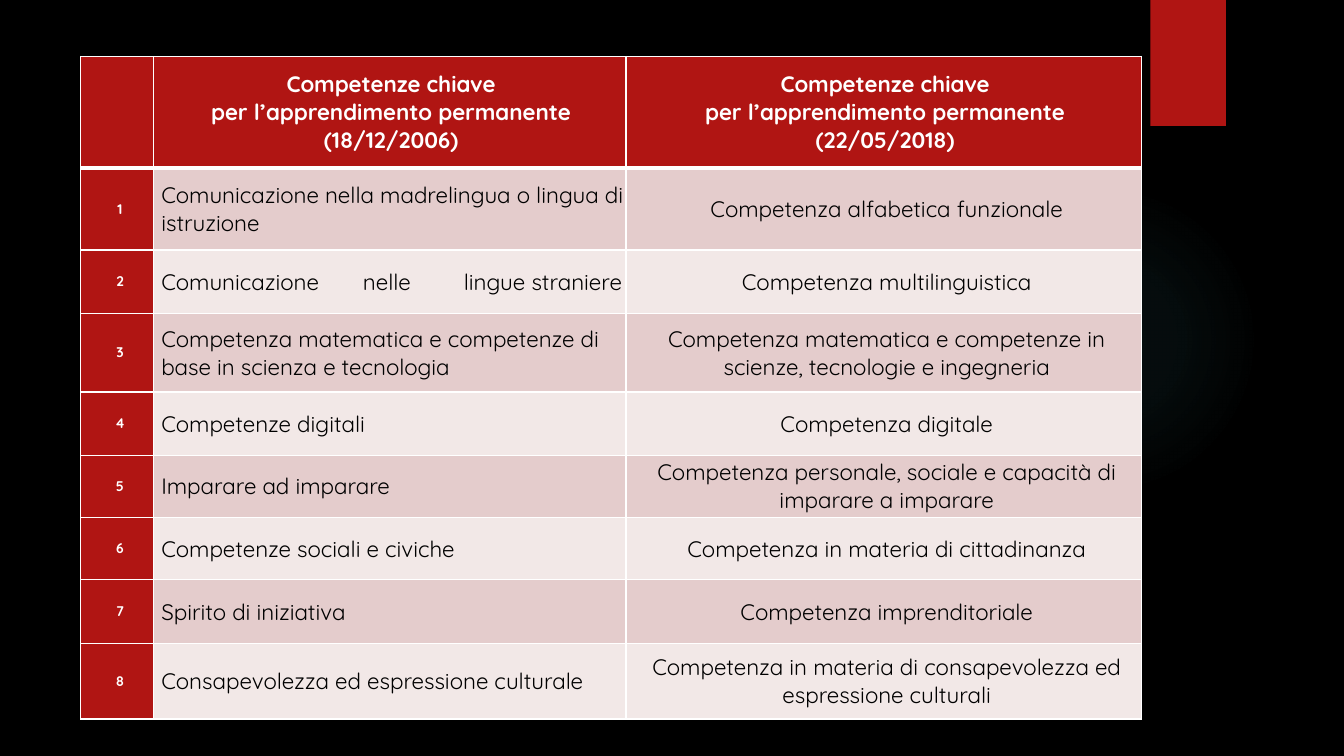
from dataclasses import dataclass

from lxml import etree
from pptx import Presentation
from pptx.dml.color import RGBColor
from pptx.enum.shapes import MSO_SHAPE
from pptx.enum.text import MSO_ANCHOR, PP_ALIGN
from pptx.oxml import parse_xml
from pptx.oxml.ns import nsdecls
from pptx.util import Inches, Pt

CENTER, LEFT = PP_ALIGN.CENTER, PP_ALIGN.LEFT
MIDDLE = MSO_ANCHOR.MIDDLE
OVAL, RECTANGLE = MSO_SHAPE.OVAL, MSO_SHAPE.RECTANGLE
FONT = "Quicksand"
COLORS = {"background": "000000", "red": "B01513", "glow": "50B9C1", "white": "FFFFFF",
          "black": "000000", "odd": "E4CCCC", "even": "F2E8E7"}
COLUMN_WIDTHS = [0.72, 4.69, 5.11]
ROW_HEIGHTS = [1.11, 0.81, 0.63, 0.78, 0.63, 0.61, 0.62, 0.63, 0.75]
GLOW_STOPS = [(0, 7), (36, 6), (69, 0)]


@dataclass(frozen=True)
class CellStyle:
    """Look of one kind of table cell."""
    fill: str
    color: str
    size: int = 16
    bold: bool = False
    align: PP_ALIGN = CENTER
    indent: float = 0.03


@dataclass(frozen=True)
class Competence:
    """One key competence as worded in 2006 and in 2018."""
    before: str
    after: str


COMPETENCES = [
    Competence("Comunicazione nella madrelingua o lingua di istruzione",
               "Competenza alfabetica funzionale"),
    Competence("Comunicazione \tnelle \tlingue straniere", "Competenza multilinguistica"),
    Competence("Competenza matematica e competenze di base in scienza e tecnologia",
               "Competenza matematica e competenze in scienze, tecnologie e ingegneria"),
    Competence("Competenze digitali", "Competenza digitale"),
    Competence("Imparare ad imparare",
               "Competenza personale, sociale e capacità di imparare a imparare"),
    Competence("Competenze sociali e civiche", "Competenza in materia di cittadinanza"),
    Competence("Spirito di iniziativa", "Competenza imprenditoriale"),
    Competence("Consapevolezza ed espressione culturale",
               "Competenza in materia di consapevolezza ed espressione culturali"),
]


def add_plain_shape(s, kind, left: float, top: float, width: float, height: float):
    """Add a shape without line or shadow."""
    sp = s.shapes.add_shape(kind, Inches(left), Inches(top), Inches(width), Inches(height))
    sp.shadow.inherit = False
    sp.line.fill.background()
    return sp


def add_glow(s) -> None:
    """Add the faint radial glow behind the table."""
    sp = add_plain_shape(s, OVAL, 9.41, 1.83, 3.08, 3.08)
    sp.fill.background()
    stops = "".join(
        f'<a:gs pos="{pos * 1000}"><a:srgbClr val="{COLORS["glow"]}">'
        f'<a:alpha val="{alpha * 1000}"/></a:srgbClr></a:gs>' for pos, alpha in GLOW_STOPS)
    gradient = parse_xml(
        f'<a:gradFill {nsdecls("a")} rotWithShape="1"><a:gsLst>{stops}</a:gsLst>'
        '<a:path path="circle"><a:fillToRect l="50000" t="50000" r="50000" b="50000"/></a:path>'
        '</a:gradFill>')
    properties = sp.element.spPr
    properties.replace(properties.find("a:noFill", {"a": gradient.nsmap["a"]}), gradient)


def set_borders(cell, top: int, bottom: int) -> None:
    """Draw white borders around a cell, widths in points."""
    tc_pr = cell._tc.get_or_add_tcPr()
    for side, width in {"L": 1, "R": 1, "T": top, "B": bottom}.items():
        ln = parse_xml(f'<a:ln{side} {nsdecls("a")} w="{Pt(width)}"/>')
        fill = etree.SubElement(ln, f'{{{ln.nsmap["a"]}}}solidFill')
        etree.SubElement(fill, f'{{{ln.nsmap["a"]}}}srgbClr', val=COLORS["white"])
        tc_pr.append(ln)


def fill_cell(cell, text: str, style: CellStyle, top: int = 1, bottom: int = 1) -> None:
    """Write and format one table cell."""
    set_borders(cell, top, bottom)
    cell.fill.solid()
    cell.fill.fore_color.rgb = RGBColor.from_string(COLORS[style.fill])
    cell.vertical_anchor = MIDDLE
    cell.margin_left, cell.margin_right = Inches(0.05), Inches(0.02)
    cell.margin_top = cell.margin_bottom = Inches(0.03)
    cell.text_frame.text = text
    for p in cell.text_frame.paragraphs:
        p.alignment = style.align
        p._p.get_or_add_pPr().set("marL", str(Inches(style.indent)))
        for r in p.runs:
            r.font.name = FONT
            r.font.size = Pt(style.size)
            r.font.bold = style.bold
            r.font.color.rgb = RGBColor.from_string(COLORS[style.color])


def add_competence_table(s) -> None:
    """Add the table comparing the 2006 and 2018 competences."""
    table = s.shapes.add_table(len(ROW_HEIGHTS), len(COLUMN_WIDTHS), Inches(0.8), Inches(0.56),
                               Inches(sum(COLUMN_WIDTHS)), Inches(sum(ROW_HEIGHTS))).table
    for column, width in zip(table.columns, COLUMN_WIDTHS):
        column.width = Inches(width)
    for row, height in zip(table.rows, ROW_HEIGHTS):
        row.height = Inches(height)

    header = CellStyle("red", "white", bold=True, indent=0)
    title = "Competenze chiave\nper l’apprendimento permanente\n"
    for i, text in enumerate(["", title + "(18/12/2006)", title + "(22/05/2018)"]):
        fill_cell(table.cell(0, i), text, header, bottom=3)

    number = CellStyle("red", "white", size=10, bold=True)
    for i, competence in enumerate(COMPETENCES, 1):
        band = "odd" if i % 2 else "even"
        top = 3 if i == 1 else 1
        fill_cell(table.cell(i, 0), str(i), number, top)
        fill_cell(table.cell(i, 1), competence.before, CellStyle(band, "black", align=LEFT), top)
        fill_cell(table.cell(i, 2), competence.after, CellStyle(band, "black"), top)


def main() -> None:
    """Build and save the slide."""
    prs = Presentation()
    prs.slide_width, prs.slide_height = Inches(13.33), Inches(7.5)
    s = prs.slides.add_slide(prs.slide_layouts[6])
    s.background.fill.solid()
    s.background.fill.fore_color.rgb = RGBColor.from_string(COLORS["background"])
    add_glow(s)
    ribbon = add_plain_shape(s, RECTANGLE, 11.41, 0, 0.75, 1.25)
    ribbon.fill.solid()
    ribbon.fill.fore_color.rgb = RGBColor.from_string(COLORS["red"])
    add_competence_table(s)
    prs.save("out.pptx")


if __name__ == "__main__":
    main()
